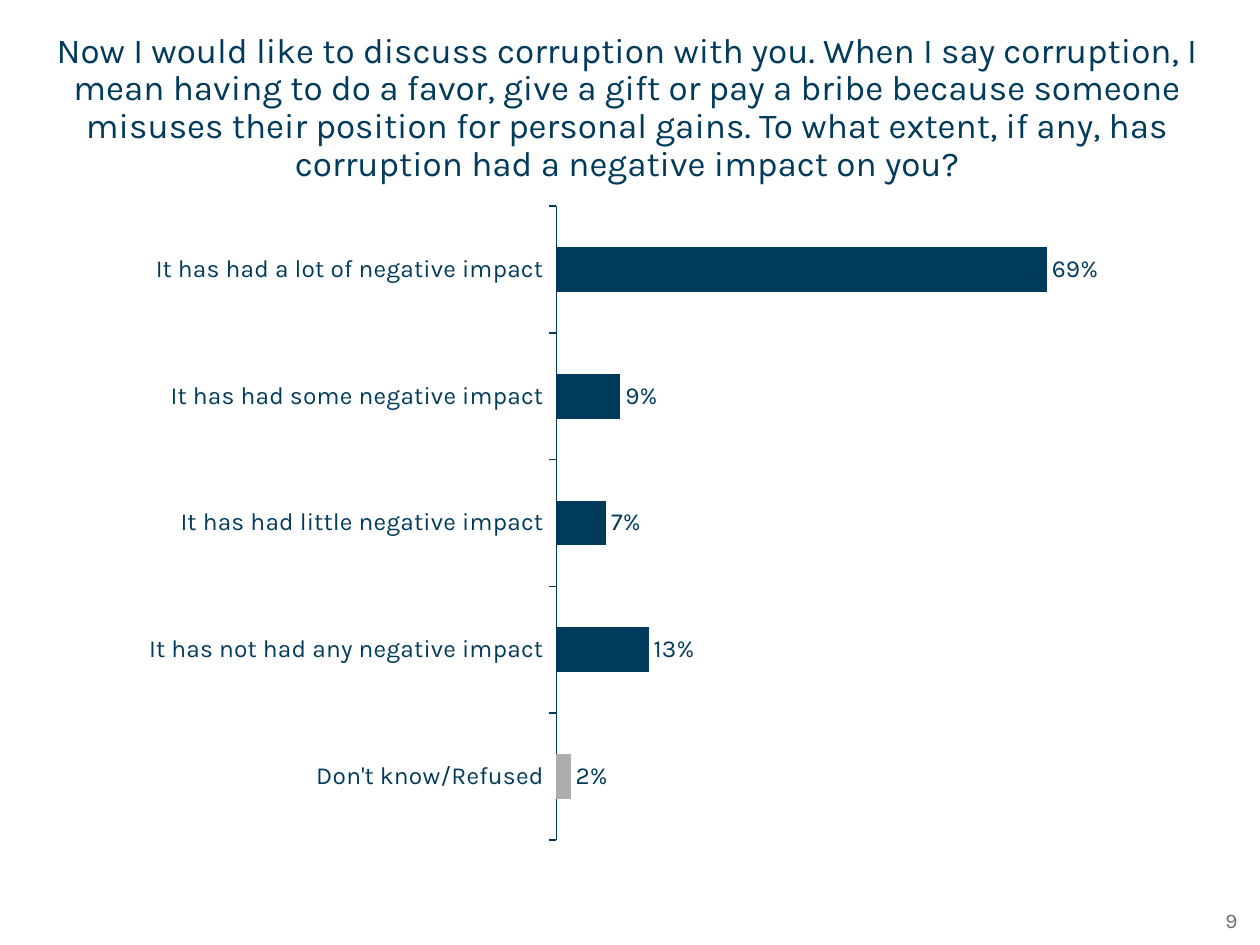
from lxml import etree
from pptx import Presentation
from pptx.chart.data import CategoryChartData
from pptx.dml.color import RGBColor
from pptx.enum.chart import XL_CHART_TYPE, XL_LABEL_POSITION, XL_TICK_MARK
from pptx.enum.text import MSO_ANCHOR, PP_ALIGN
from pptx.oxml.ns import qn
from pptx.util import Cm, Pt

NAVY = RGBColor(0x00, 0x3B, 0x5C)
GREY = RGBColor(0xAD, 0xAD, 0xB0)
PAGE_GREY = RGBColor(0x6D, 0x6E, 0x70)
FONT = "Karla"
BAR_CLUSTERED = XL_CHART_TYPE.BAR_CLUSTERED
OUTSIDE_END = XL_LABEL_POSITION.OUTSIDE_END
TICK_OUTSIDE = XL_TICK_MARK.OUTSIDE
MIDDLE = MSO_ANCHOR.MIDDLE
CENTER, RIGHT = PP_ALIGN.CENTER, PP_ALIGN.RIGHT

QUESTION = (
    "Now I would like to discuss corruption with you. When I say corruption, "
    "I mean having to do a favor, give a gift or pay a bribe because someone "
    "misuses their position for personal gains. To what extent, if any, has "
    "corruption had a negative impact on you?"
)
ANSWERS = {
    "It has had a lot of negative impact": 0.69,
    "It has had some negative impact": 0.09,
    "It has had little negative impact": 0.07,
    "It has not had any negative impact": 0.13,
    "Don't know/Refused": 0.02,
}
PLOT_AREA = {"x": 0.42, "y": 0.02, "w": 0.56, "h": 0.96}


def style_font(font, size, color):
    font.name = FONT
    font.size = Pt(size)
    font.color.rgb = color


def add_text(slide, text, box, size, color, align, line_spacing):
    frame = slide.shapes.add_textbox(*map(Cm, box)).text_frame
    frame.word_wrap = True
    frame.vertical_anchor = MIDDLE
    frame.text = text
    paragraph = frame.paragraphs[0]
    paragraph.alignment = align
    paragraph.line_spacing = line_spacing
    style_font(paragraph.runs[0].font, size, color)


presentation = Presentation()
presentation.slide_width = Cm(25.4)
presentation.slide_height = Cm(19.05)
slide = presentation.slides.add_slide(presentation.slide_layouts[6])

add_text(slide, "9", (19.48, 18.03, 5.72, 1.02), 12, PAGE_GREY, RIGHT, 1.0)
add_text(slide, QUESTION, (0.79, 0.94, 23.72, 2.49), 20, NAVY, CENTER, 0.9)

impact_data = CategoryChartData(number_format="0%")
impact_data.categories = list(ANSWERS)
impact_data.add_series("Series 1", list(ANSWERS.values()))
impact_chart = slide.shapes.add_chart(
    BAR_CLUSTERED, Cm(2.62), Cm(3.89), Cm(20.47), Cm(13.31), impact_data
).chart
impact_chart.has_legend = False
impact_chart.has_title = False
style_font(impact_chart.font, 10, NAVY)

answer_axis = impact_chart.category_axis
answer_axis.reverse_order = True
answer_axis.major_tick_mark = TICK_OUTSIDE
answer_axis.has_major_gridlines = False
answer_axis.format.line.color.rgb = NAVY
answer_axis.format.line.width = Pt(0.75)
style_font(answer_axis.tick_labels.font, 14, NAVY)

share_axis = impact_chart.value_axis
share_axis.minimum_scale = 0
share_axis.maximum_scale = 0.8
share_axis.has_major_gridlines = False
share_axis.tick_labels.number_format = "0%"
share_axis.tick_labels.number_format_is_linked = False
share_axis.visible = False

bars = impact_chart.plots[0]
bars.gap_width = 182
bars.vary_by_categories = False
shares = bars.series[0]
shares.invert_if_negative = False
shares.format.fill.solid()
shares.format.fill.fore_color.rgb = NAVY
refused_fill = shares.points[len(ANSWERS) - 1].format.fill
refused_fill.solid()
refused_fill.fore_color.rgb = GREY

share_labels = shares.data_labels
share_labels.show_value = True
share_labels.position = OUTSIDE_END
share_labels.number_format = "0%"
share_labels.number_format_is_linked = False
style_font(share_labels.font, 14, NAVY)

plot_area = bars._element.getparent()
for old_layout in plot_area.findall(qn("c:layout")):
    plot_area.remove(old_layout)
layout = etree.Element(qn("c:layout"))
plot_area.insert(0, layout)
manual_layout = etree.SubElement(layout, qn("c:manualLayout"))
settings = {"layoutTarget": "inner", "xMode": "edge", "yMode": "edge", **PLOT_AREA}
for tag, value in settings.items():
    etree.SubElement(manual_layout, qn(f"c:{tag}")).set("val", str(value))

presentation.save("out.pptx")
